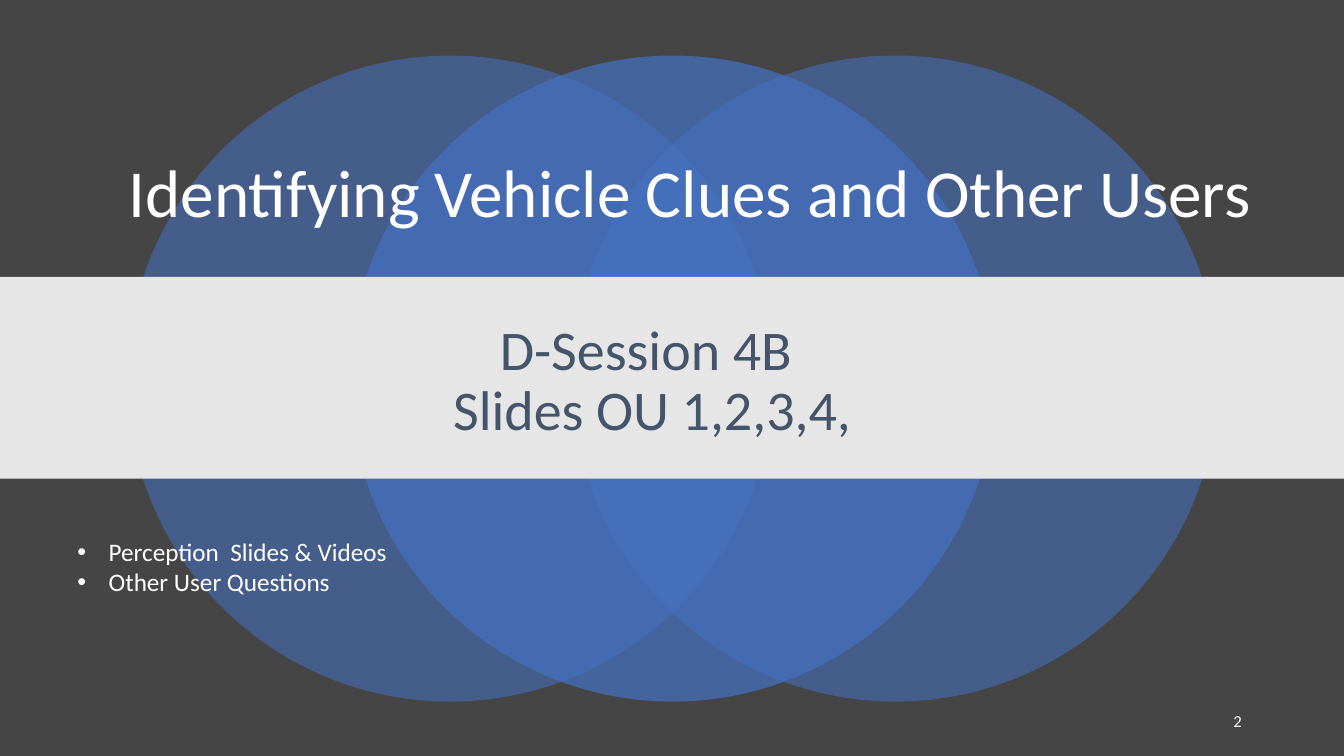
from dataclasses import dataclass

from lxml.etree import SubElement
from pptx import Presentation
from pptx.dml.color import RGBColor
from pptx.enum.shapes import MSO_SHAPE
from pptx.enum.text import MSO_ANCHOR, PP_ALIGN
from pptx.oxml.ns import qn
from pptx.slide import Slide
from pptx.util import Cm, Pt

COLOURS = {
    "background": "454545",
    "circle": "4472C4",
    "band": "E7E6E6",
    "heading": "44546A",
    "light": "FFFFFF",
}
FONT = "Calibri"
PAGE_WIDTH, PAGE_HEIGHT = 33.87, 19.05
CIRCLE_SIZE, CIRCLE_TOP = 16.28, 1.4
CIRCLE_LEFT, CIRCLE_STEP = 3.2, 5.61


@dataclass(frozen=True)
class Area:
    """A rectangle on the page, in centimetres."""
    left: float
    top: float
    width: float
    height: float

    def lengths(self) -> tuple[Cm, Cm, Cm, Cm]:
        return Cm(self.left), Cm(self.top), Cm(self.width), Cm(self.height)


@dataclass(frozen=True)
class Circle:
    column: int
    opacity: int


# Back to front: the middle circle lies on top
CIRCLES = [Circle(0, 55), Circle(2, 55), Circle(1, 70)]


def colour(name: str) -> RGBColor:
    return RGBColor.from_string(COLOURS[name])


def add_filled_shape(page: Slide, kind: MSO_SHAPE, area: Area, fill: str,
                     opacity: int = 100) -> None:
    shape = page.shapes.add_shape(kind, *area.lengths())
    shape.shadow.inherit = False
    shape.fill.solid()
    shape.fill.fore_color.rgb = colour(fill)
    shape.line.fill.background()
    if opacity < 100:
        solid = shape.fill._xPr.find(qn("a:solidFill"))
        SubElement(solid[0], qn("a:alpha"), val=str(opacity * 1000))


def add_text(page: Slide, area: Area, paragraphs: list[str], *, size: int,
             fill: str = "light", align: PP_ALIGN = PP_ALIGN.LEFT,
             anchor: MSO_ANCHOR = MSO_ANCHOR.TOP, spacing: float = 1.0,
             bullet: bool = False) -> None:
    box = page.shapes.add_textbox(*area.lengths())
    frame = box.text_frame
    frame.word_wrap = True
    frame.vertical_anchor = anchor
    for index, text in enumerate(paragraphs):
        para = frame.add_paragraph() if index else frame.paragraphs[0]
        para.alignment = align
        para.line_spacing = spacing
        if bullet:
            properties = para._p.get_or_add_pPr()
            properties.set("marL", str(Cm(0.79)))
            properties.set("indent", str(-Cm(0.79)))
            SubElement(properties, qn("a:buFont"), typeface="Arial")
            SubElement(properties, qn("a:buChar"), char="•")
        para.text = text
        for span in para.runs:
            span.font.name = FONT
            span.font.size = Pt(size)
            span.font.color.rgb = colour(fill)


def main() -> None:
    deck = Presentation()
    deck.slide_width, deck.slide_height = Cm(PAGE_WIDTH), Cm(PAGE_HEIGHT)
    page = deck.slides.add_slide(deck.slide_layouts[6])
    page.background.fill.solid()
    page.background.fill.fore_color.rgb = colour("background")

    # Overlapping circles
    for circle in CIRCLES:
        left = CIRCLE_LEFT + circle.column * CIRCLE_STEP
        area = Area(left, CIRCLE_TOP, CIRCLE_SIZE, CIRCLE_SIZE)
        add_filled_shape(page, MSO_SHAPE.OVAL, area, "circle", circle.opacity)

    # Session band
    add_filled_shape(page, MSO_SHAPE.RECTANGLE,
                     Area(0, 6.98, PAGE_WIDTH, 5.08), "band")
    add_text(page, Area(2.9, 7.72, 26.75, 3.84),
             ["D-Session 4B\v Slides OU 1,2,3,4,"], size=40, fill="heading",
             align=PP_ALIGN.CENTER, anchor=MSO_ANCHOR.MIDDLE, spacing=0.9)

    # Page number
    add_text(page, Area(23.93, 17.65, 7.62, 1.02), ["2"], size=12,
             align=PP_ALIGN.RIGHT, anchor=MSO_ANCHOR.MIDDLE)

    # Topic and contents
    add_text(page, Area(2.41, 3.89, 29.97, 2.11),
             ["Identifying Vehicle Clues and Other Users"], size=48,
             align=PP_ALIGN.CENTER, spacing=0.9)
    add_text(page, Area(1.7, 13.39, 10.77, 1.8),
             ["Perception  Slides & Videos", "Other User Questions"],
             size=18, bullet=True)

    deck.save("out.pptx")


if __name__ == "__main__":
    main()
